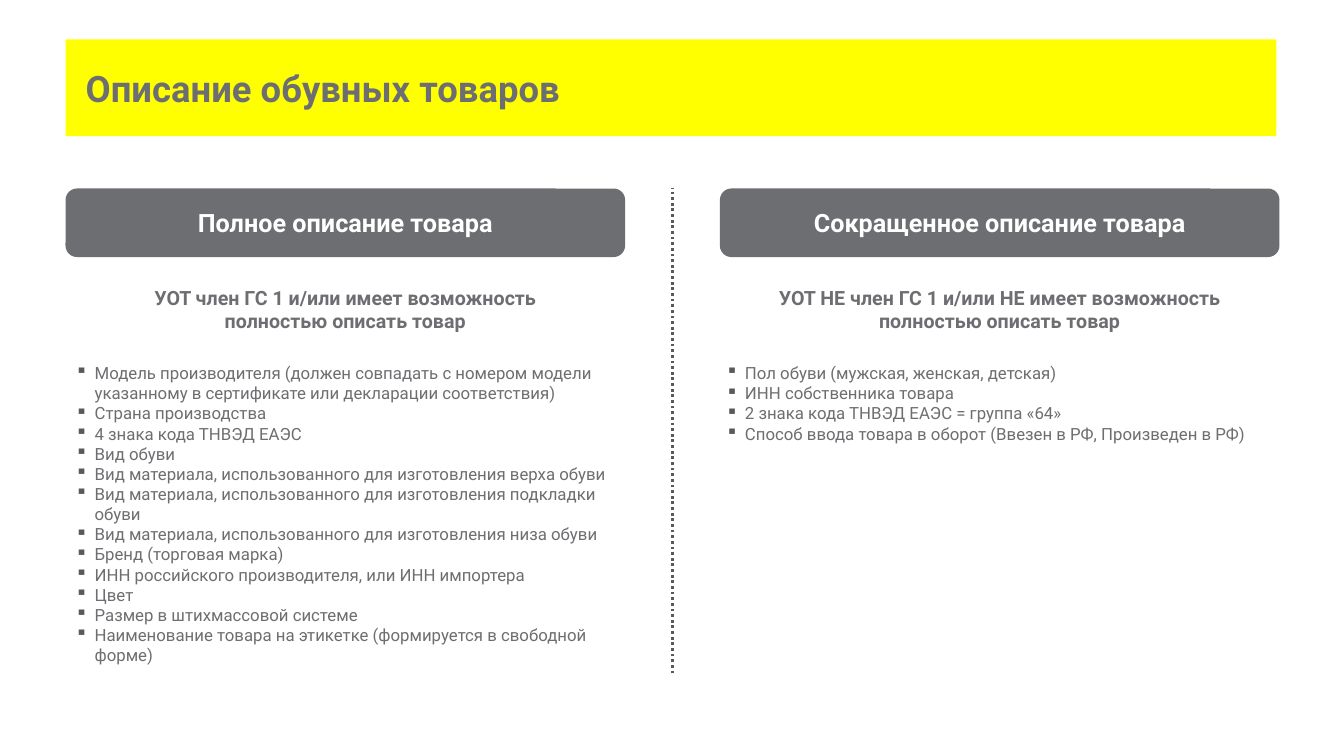
from lxml import etree
from pptx import Presentation
from pptx.dml.color import RGBColor
from pptx.enum import dml, shapes, text
from pptx.oxml.ns import qn
from pptx.util import Inches, Pt

GREY, DARK, YELLOW, WHITE = "6D6E71", "595959", "FFFF00", "FFFFFF"
TOP, COL_W = 1.87, 5.55


def rgb(value):
    return RGBColor.from_string(value)


def write(tf, lines, size, color, bold=False, align=None, inset=None, bullet=None):
    tf.word_wrap = True
    tf.auto_size = text.MSO_AUTO_SIZE.NONE
    tf.vertical_anchor = text.MSO_ANCHOR.TOP if bullet else text.MSO_ANCHOR.MIDDLE
    if inset:
        tf.margin_left = tf.margin_right = Inches(inset)
        tf.margin_top = tf.margin_bottom = Inches(inset)
    for i, line in enumerate(lines):
        p = tf.add_paragraph() if i else tf.paragraphs[0]
        p.alignment = align
        if bullet:
            pPr = p._p.get_or_add_pPr()
            pPr.set("marL", str(Inches(0.19)))
            pPr.set("indent", str(Inches(-0.19)))
            clr = etree.SubElement(pPr, qn("a:buClr"))
            etree.SubElement(clr, qn("a:srgbClr"), val=DARK)
            etree.SubElement(pPr, qn("a:buChar"), char=bullet)
        r = p.add_run()
        r.text = line
        r.font.name, r.font.size, r.font.bold = "Roboto", Pt(size), bold
        r.font.color.rgb = rgb(color)


prs = Presentation()
prs.slide_width, prs.slide_height = Inches(13.33), Inches(7.5)
s = prs.slides.add_slide(prs.slide_layouts[5])

# Title: the placeholder itself is the rounded yellow band
title = s.shapes.title
title.left, title.top = Inches(0.65), Inches(0.39)
title.width, title.height = Inches(12.01), Inches(0.96)
geom = etree.SubElement(title._element.spPr, qn("a:prstGeom"), prst="roundRect")
etree.SubElement(geom, qn("a:avLst"))
title.fill.solid()
title.fill.fore_color.rgb = rgb(YELLOW)
write(title.text_frame, ["Описание обувных товаров"], 26, GREY, True,
      text.PP_ALIGN.LEFT, 0.2)

# Dotted divider between the columns
divider = s.shapes.add_connector(shapes.MSO_CONNECTOR.STRAIGHT, Inches(6.67), Inches(6.68),
                                 Inches(6.67), Inches(TOP))
divider.line.color.rgb = rgb(DARK)
divider.line.width = Pt(2)
divider.line.dash_style = dml.MSO_LINE.ROUND_DOT
etree.SubElement(divider._element.spPr, qn("a:effectLst"))

# Columns: left, list left, list height, heading, condition, attributes
columns = [
    (0.65, 0.65, 3.13, "Полное описание товара",
     ["УОТ член ГС 1 и/или имеет возможность", "полностью описать товар"],
     ["Модель производителя (должен совпадать с номером модели указанному в сертификате "
      "или декларации соответствия)",
      "Страна производства",
      "4 знака кода ТНВЭД ЕАЭС",
      "Вид обуви",
      "Вид материала, использованного для изготовления верха обуви",
      "Вид материала, использованного для изготовления подкладки обуви",
      "Вид материала, использованного для изготовления низа обуви",
      "Бренд (торговая марка)",
      "ИНН российского производителя, или ИНН импортера",
      "Цвет",
      "Размер в штихмассовой системе",
      "Наименование товара на этикетке (формируется в свободной форме)"]),
    (7.14, 7.1, 0.91, "Сокращенное описание товара",
     ["УОТ НЕ член ГС 1 и/или НЕ имеет возможность полностью описать товар"],
     ["Пол обуви (мужская, женская, детская)",
      "ИНН собственника товара",
      "2 знака кода ТНВЭД ЕАЭС = группа «64»",
      "Способ ввода товара в оборот (Ввезен в РФ, Произведен в РФ)"]),
]
for left, list_left, list_h, heading, condition, attributes in columns:
    sp = s.shapes.add_shape(shapes.MSO_SHAPE.ROUNDED_RECTANGLE, Inches(left), Inches(TOP),
                            Inches(COL_W), Inches(0.68))
    sp.shadow.inherit = False
    sp.fill.solid()
    sp.fill.fore_color.rgb = rgb(GREY)
    sp.line.fill.background()
    write(sp.text_frame, [heading], 18, WHITE, True, text.PP_ALIGN.CENTER, 0.2)

    box = s.shapes.add_textbox(Inches(left), Inches(2.81), Inches(COL_W), Inches(0.51))
    write(box.text_frame, condition, 14, GREY, True, text.PP_ALIGN.CENTER)

    box = s.shapes.add_textbox(Inches(list_left), Inches(3.55), Inches(COL_W), Inches(list_h))
    write(box.text_frame, attributes, 12, GREY, bullet="▪")

prs.save("out.pptx")
